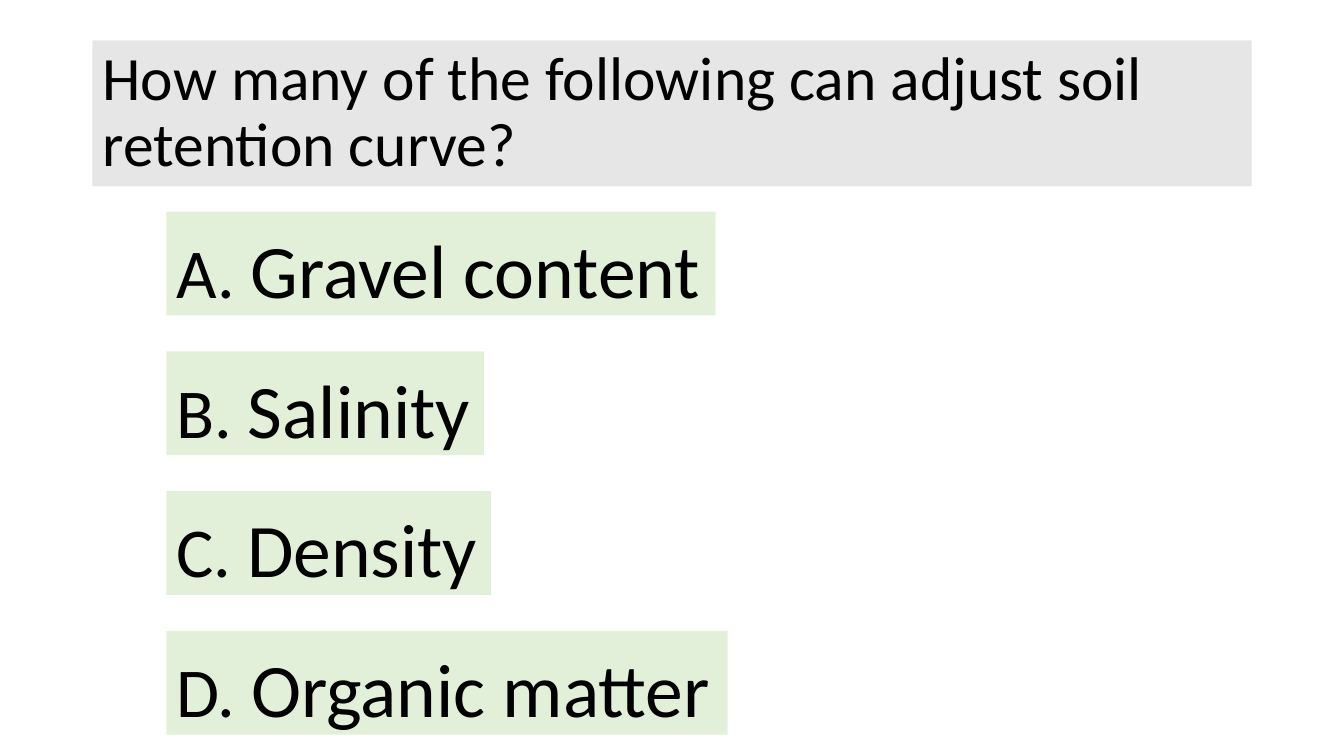
from dataclasses import dataclass

from pptx import Presentation
from pptx.dml.color import RGBColor
from pptx.enum.text import MSO_ANCHOR, MSO_AUTO_SIZE, PP_ALIGN
from pptx.util import Pt

LEFT = PP_ALIGN.LEFT
TOP = MSO_ANCHOR.TOP
MIDDLE = MSO_ANCHOR.MIDDLE
NO_FIT = MSO_AUTO_SIZE.NONE
GROW = MSO_AUTO_SIZE.SHAPE_TO_FIT_TEXT

COLOURS = {"question": "E7E6E6", "option": "E2F0D9", "text": "000000"}
FONT = "Calibri"
QUESTION = "How many of the following can adjust soil retention curve?"
QUESTION_SIZE, LETTER_SIZE, ANSWER_SIZE = 44, 50, 54
OPTION_LEFT, OPTION_TOP, OPTION_HEIGHT, OPTION_STEP = 118.8, 151.2, 74.2, 99.8

QUESTION_PLACE = {"left": Pt(66), "top": Pt(28.8), "width": Pt(828), "height": Pt(104.4)}
QUESTION_FRAME = {"word_wrap": True, "auto_size": NO_FIT, "vertical_anchor": MIDDLE}
QUESTION_PARAGRAPH = {"alignment": LEFT, "line_spacing": 0.9}
OPTION_FRAME = {"word_wrap": False, "auto_size": GROW, "vertical_anchor": TOP}
OPTION_PARAGRAPH = {"alignment": LEFT, "line_spacing": 1.07, "space_after": Pt(8)}


@dataclass(frozen=True)
class Option:
    letter: str
    answer: str
    width: float


OPTIONS = [
    Option("A", "Gravel content", 392.4),
    Option("B", "Salinity", 226.8),
    Option("C", "Density", 231.8),
    Option("D", "Organic matter", 401),
]


def apply_format(target, values: dict) -> None:
    for attribute, value in values.items():
        setattr(target, attribute, value)


def fill_solid(shape, colour: str) -> None:
    shape.fill.solid()
    shape.fill.fore_color.rgb = RGBColor.from_string(COLOURS[colour])


def add_text(paragraph, text: str, size: float) -> None:
    run = paragraph.add_run()
    run.text = text
    apply_format(run.font, {"name": FONT, "size": Pt(size)})
    run.font.color.rgb = RGBColor.from_string(COLOURS["text"])


def draw_question(slide) -> None:
    question = slide.shapes.title
    apply_format(question, QUESTION_PLACE)
    fill_solid(question, "question")
    apply_format(question.text_frame, QUESTION_FRAME)
    paragraph = question.text_frame.paragraphs[0]
    apply_format(paragraph, QUESTION_PARAGRAPH)
    add_text(paragraph, QUESTION, QUESTION_SIZE)


def draw_option(slide, option: Option, top: float) -> None:
    box = slide.shapes.add_textbox(
        Pt(OPTION_LEFT), Pt(top), Pt(option.width), Pt(OPTION_HEIGHT)
    )
    fill_solid(box, "option")
    apply_format(box.text_frame, OPTION_FRAME)
    paragraph = box.text_frame.paragraphs[0]
    apply_format(paragraph, OPTION_PARAGRAPH)
    add_text(paragraph, f"{option.letter}. ", LETTER_SIZE)
    add_text(paragraph, option.answer, ANSWER_SIZE)


def main() -> None:
    deck = Presentation()
    apply_format(deck, {"slide_width": Pt(960), "slide_height": Pt(540)})
    slide = deck.slides.add_slide(deck.slide_layouts.get_by_name("Title Only"))
    draw_question(slide)
    for row, option in enumerate(OPTIONS):
        draw_option(slide, option, OPTION_TOP + row * OPTION_STEP)
    deck.save("out.pptx")


if __name__ == "__main__":
    main()
